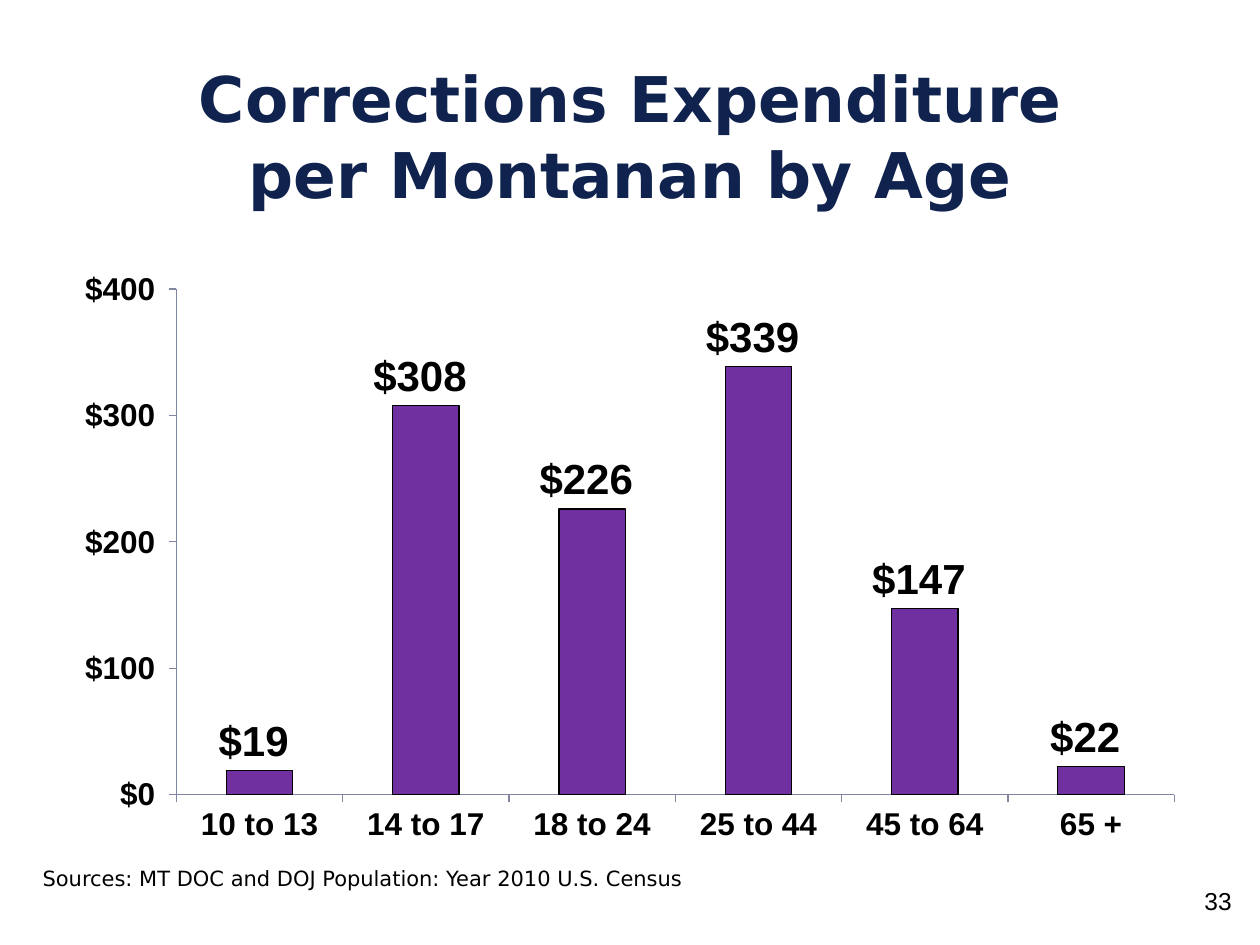
from lxml import etree
from pptx import Presentation
from pptx.chart.data import CategoryChartData
from pptx.dml.color import RGBColor
from pptx.enum.chart import XL_CHART_TYPE, XL_LABEL_POSITION, XL_TICK_MARK
from pptx.enum.text import MSO_ANCHOR, PP_ALIGN
from pptx.oxml.ns import qn
from pptx.util import Cm, Pt

CLUSTERED = XL_CHART_TYPE.COLUMN_CLUSTERED
OUTSIDE_END = XL_LABEL_POSITION.OUTSIDE_END
TICK_OUTSIDE = XL_TICK_MARK.OUTSIDE
MIDDLE = MSO_ANCHOR.MIDDLE
CENTER = PP_ALIGN.CENTER

HEADING_FACE = "DejaVu Sans"
CHART_FACE = "Arial"
BLACK = "000000"
NAVY = "10224E"
PURPLE = "7030A0"
AXIS_GRAY = "8086A0"
DOLLARS = r"\$#,##0_);[Red]\(\$#,##0\)"

SPENDING_BY_AGE = {
    "10 to 13": 19,
    "14 to 17": 308,
    "18 to 24": 226,
    "25 to 44": 339,
    "45 to 64": 147,
    "65 +": 22,
}
PLOT_LAYOUT = {"x": 0.1, "y": 0.05, "w": 0.88, "h": 0.85}


def rgb(value):
    return RGBColor.from_string(value)


def style_font(font, face, size, color, bold=False):
    font.name = face
    font.size = Pt(size)
    font.bold = bold
    font.color.rgb = rgb(color)


def set_title(slide, lines):
    title = slide.shapes.title
    title.left, title.top = Cm(0.64), Cm(0.99)
    title.width, title.height = Cm(24.13), Cm(3.48)
    frame = title.text_frame
    frame.vertical_anchor = MIDDLE
    frame.text = "\n".join(lines)
    for paragraph in frame.paragraphs:
        paragraph.alignment = CENTER
        style_font(paragraph.font, HEADING_FACE, 36, NAVY, True)


def add_note(slide, text, left, top, width, height, face, size):
    note = slide.shapes.add_textbox(Cm(left), Cm(top), Cm(width), Cm(height))
    note.text_frame.word_wrap = True
    paragraph = note.text_frame.paragraphs[0]
    paragraph.text = text
    style_font(paragraph.font, face, size, BLACK)


def place_plot(chart):
    plot_area = chart.plots[0]._element.getparent()
    for old_layout in plot_area.findall(qn("c:layout")):
        plot_area.remove(old_layout)
    layout = etree.Element(qn("c:layout"))
    manual = etree.SubElement(layout, qn("c:manualLayout"))
    settings = {"layoutTarget": "inner", "xMode": "edge", "yMode": "edge", **PLOT_LAYOUT}
    for name, value in settings.items():
        etree.SubElement(manual, qn(f"c:{name}")).set("val", str(value))
    plot_area.insert(0, layout)


def style_axis(axis):
    axis.has_major_gridlines = False
    axis.major_tick_mark = TICK_OUTSIDE
    axis.format.line.color.rgb = rgb(AXIS_GRAY)
    style_font(axis.tick_labels.font, CHART_FACE, 18, BLACK, True)


def style_columns(plot):
    plot.gap_width = 150
    plot.vary_by_categories = False
    columns = plot.series[0].format
    columns.fill.solid()
    columns.fill.fore_color.rgb = rgb(PURPLE)
    columns.line.color.rgb = rgb(BLACK)
    columns.line.width = Pt(0.75)
    plot.has_data_labels = True
    labels = plot.data_labels
    labels.show_value = True
    labels.position = OUTSIDE_END
    labels.number_format = DOLLARS
    labels.number_format_is_linked = False
    style_font(labels.font, CHART_FACE, 24, BLACK, True)


def add_spending_chart(slide):
    spending = CategoryChartData()
    spending.categories = SPENDING_BY_AGE.keys()
    spending.add_series("Series 1", SPENDING_BY_AGE.values())
    chart = slide.shapes.add_chart(
        CLUSTERED, Cm(1.27), Cm(5.23), Cm(22.86), Cm(11.99), spending
    ).chart
    chart.has_legend = False
    chart.has_title = False
    style_font(chart.font, HEADING_FACE, 18, "102E6C")
    place_plot(chart)
    style_columns(chart.plots[0])
    style_axis(chart.category_axis)
    dollars = chart.value_axis
    style_axis(dollars)
    dollars.minimum_scale, dollars.maximum_scale = 0, 400
    dollars.major_unit = 100
    dollars.tick_labels.number_format = DOLLARS
    dollars.tick_labels.number_format_is_linked = False


def main():
    deck = Presentation()
    deck.slide_width, deck.slide_height = Cm(25.4), Cm(19.05)
    slide = deck.slides.add_slide(deck.slide_layouts[5])
    set_title(slide, ["Corrections Expenditure", "per Montanan by Age"])
    add_spending_chart(slide)
    add_note(slide, "33", 24.03, 17.73, 1.37, 1.32, CHART_FACE, 14)
    add_note(slide, "Sources: MT DOC and DOJ Population: Year 2010 U.S. Census",
             0.61, 17.32, 24.13, 1.27, HEADING_FACE, 12)
    deck.save("out.pptx")


if __name__ == "__main__":
    main()
